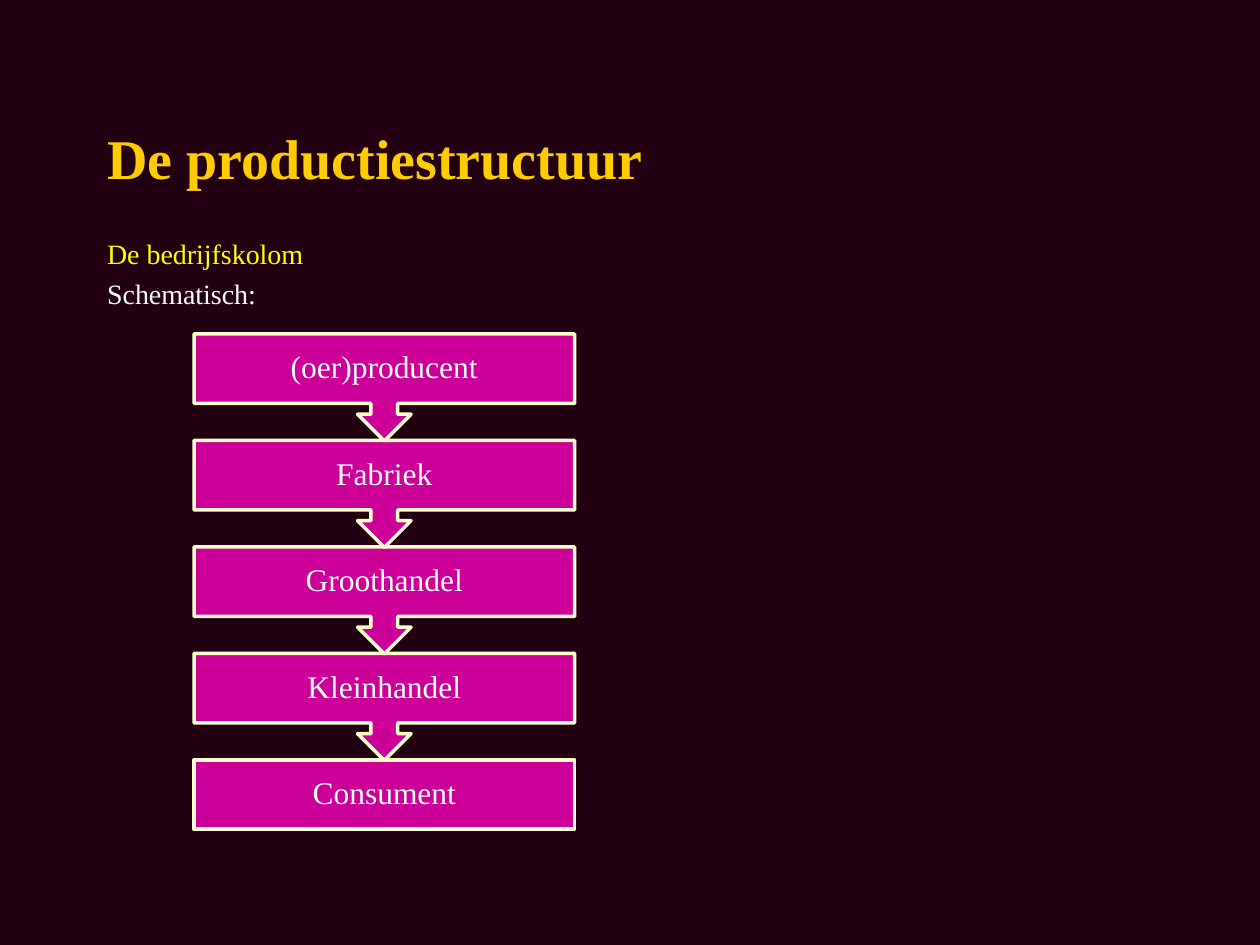
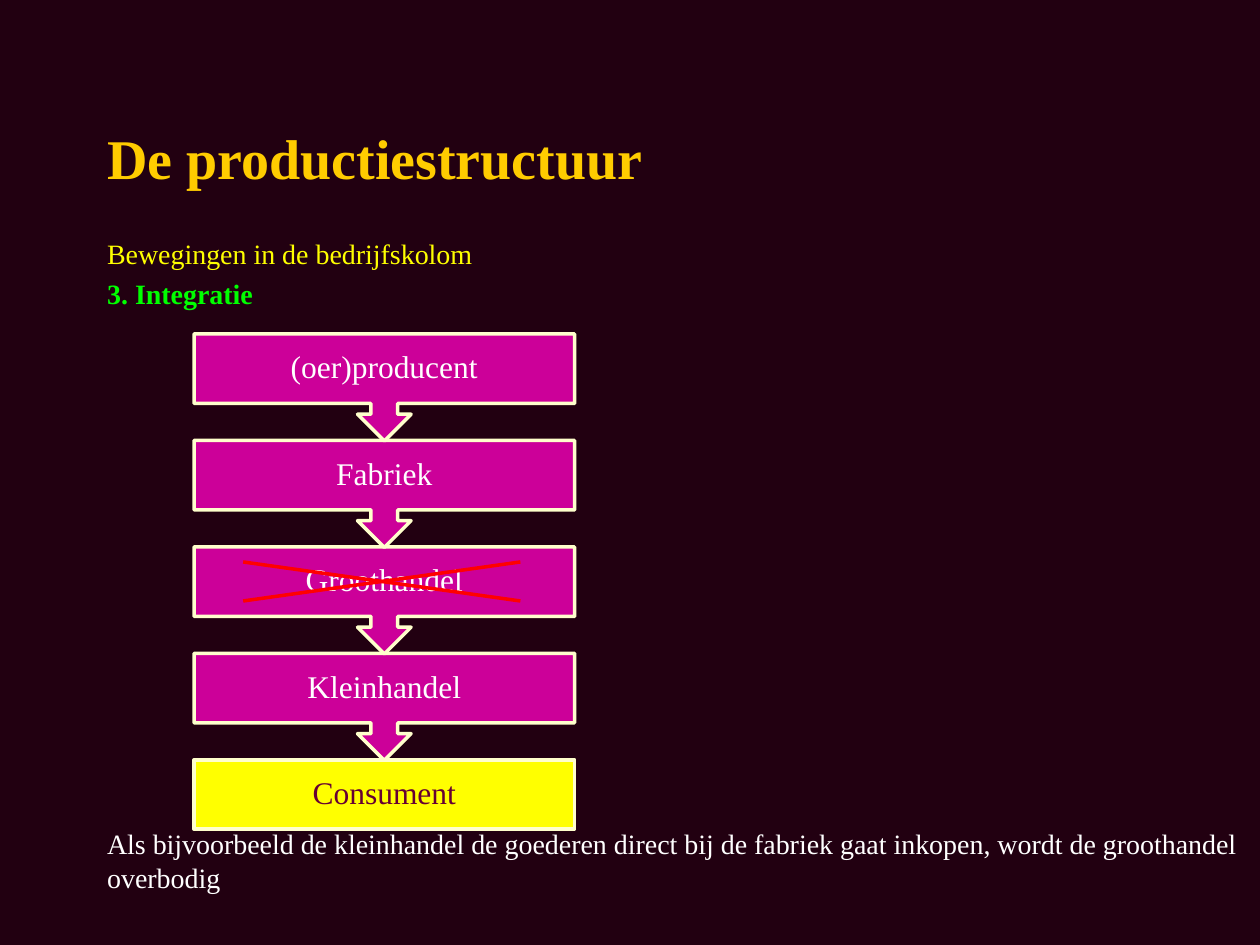
from lxml.etree import SubElement
from pptx import Presentation
from pptx.dml.color import RGBColor
from pptx.enum.shapes import MSO_CONNECTOR as Connector, MSO_SHAPE as Shape
from pptx.enum.text import MSO_ANCHOR as Anchor, MSO_AUTO_SIZE as AutoSize, PP_ALIGN as Align
from pptx.oxml.ns import qn
from pptx.util import Inches, Pt

BACKGROUND = RGBColor(0x22, 0x00, 0x11)
GOLD = RGBColor(0xFF, 0xCC, 0x00)
YELLOW = RGBColor(0xFF, 0xFF, 0x00)
WHITE = RGBColor(0xFF, 0xFF, 0xFF)
GREEN = RGBColor(0x00, 0xFF, 0x00)
MAGENTA = RGBColor(0xCC, 0x00, 0x99)
CREAM = RGBColor(0xFF, 0xFF, 0xCC)
WINE = RGBColor(0x66, 0x00, 0x33)
RED = RGBColor(0xFF, 0x00, 0x00)

FONT = "Times New Roman"
TITLE = "De productiestructuur"
LINKS = ["(oer)producent", "Fabriek", "Groothandel", "Kleinhandel", "Consument"]
CHAIN_LEFT, CHAIN_TOP, CHAIN_STEP = 1.54, 2.65, 0.845
LINK_WIDTH, BOX_HEIGHT, CALLOUT_HEIGHT = 3.02, 0.55, 0.85
LINE_GAP = 3.7
BELOW_CHAIN_GAP = 295

# Each body line: text, colour, bold, space before in points
PAGES = [
    {
        "body_size": (8.42, 5),
        "lines": [
            ("De bedrijfskolom", YELLOW, False, LINE_GAP),
            ("Schematisch:", WHITE, False, LINE_GAP),
        ],
        "consumer": (MAGENTA, WHITE),
        "crossed_out": False,
    },
    {
        "body_size": (9.37, 5.54),
        "lines": [
            ("Bewegingen in de bedrijfskolom", YELLOW, False, LINE_GAP),
            ("3. Integratie", GREEN, True, LINE_GAP),
            ("Als bijvoorbeeld de kleinhandel de goederen direct bij de fabriek "
             "gaat inkopen, wordt de groothandel overbodig", WHITE, False, BELOW_CHAIN_GAP),
        ],
        "consumer": (YELLOW, WINE),
        "crossed_out": True,
    },
]


def place(shape, left, top, width, height, anchor):
    """Move a placeholder and fix how its text frame behaves."""
    shape.left, shape.top = Inches(left), Inches(top)
    shape.width, shape.height = Inches(width), Inches(height)
    frame = shape.text_frame
    frame.word_wrap = True
    frame.auto_size = AutoSize.NONE
    frame.vertical_anchor = anchor
    return frame


def write(para, text, size, color, bold=False, align=Align.LEFT):
    para.alignment = align
    span = para.add_run()
    span.text = text
    for name, value in {"name": FONT, "size": Pt(size), "bold": bold}.items():
        setattr(span.font, name, value)
    span.font.color.rgb = color


deck = Presentation()
deck.slide_width, deck.slide_height = Inches(10), Inches(7.5)
fill = deck.slide_master.background.fill
fill.solid()
fill.fore_color.rgb = BACKGROUND

for content in PAGES:
    page = deck.slides.add_slide(deck.slide_layouts[0])
    title, body = page.placeholders

    frame = place(title, 0.75, 0.83, 8.5, 0.83, Anchor.MIDDLE)
    write(frame.paragraphs[0], TITLE, 32, GOLD, bold=True)

    frame = place(body, 0.75, 1.83, *content["body_size"], Anchor.TOP)
    for number, (text, color, bold, gap) in enumerate(content["lines"]):
        para = frame.add_paragraph() if number else frame.paragraphs[0]
        para.space_before = Pt(gap)
        write(para, text, 16, color, bold)

    # Bottom link first, so that each arrow tip lies over the box below it
    for row, name in reversed(list(enumerate(LINKS))):
        is_last = row == len(LINKS) - 1
        box = page.shapes.add_shape(
            Shape.RECTANGLE if is_last else Shape.DOWN_ARROW_CALLOUT,
            Inches(CHAIN_LEFT), Inches(CHAIN_TOP + row * CHAIN_STEP),
            Inches(LINK_WIDTH), Inches(BOX_HEIGHT if is_last else CALLOUT_HEIGHT))
        fill_color, text_color = content["consumer"] if is_last else (MAGENTA, WHITE)
        box.shadow.inherit = False
        box.fill.solid()
        box.fill.fore_color.rgb = fill_color
        box.line.color.rgb = CREAM
        box.line.width = Pt(2)
        frame = box.text_frame
        frame.word_wrap = True
        frame.vertical_anchor = Anchor.MIDDLE
        for side in ("left", "top", "right", "bottom"):
            setattr(frame, f"margin_{side}", Inches(0.14))
        para = frame.paragraphs[0]
        para.line_spacing = 0.9
        write(para, name, 18, text_color, align=Align.CENTER)

    if content["crossed_out"]:
        for start, end in ((4.77, 4.46), (4.46, 4.77)):
            stroke = page.shapes.add_connector(
                Connector.STRAIGHT, Inches(1.93), Inches(start), Inches(4.13), Inches(end))
            stroke.line.color.rgb = RED
            stroke.line.width = Pt(2)
            SubElement(stroke._element.spPr, qn("a:effectLst"))

deck.save("out.pptx")
